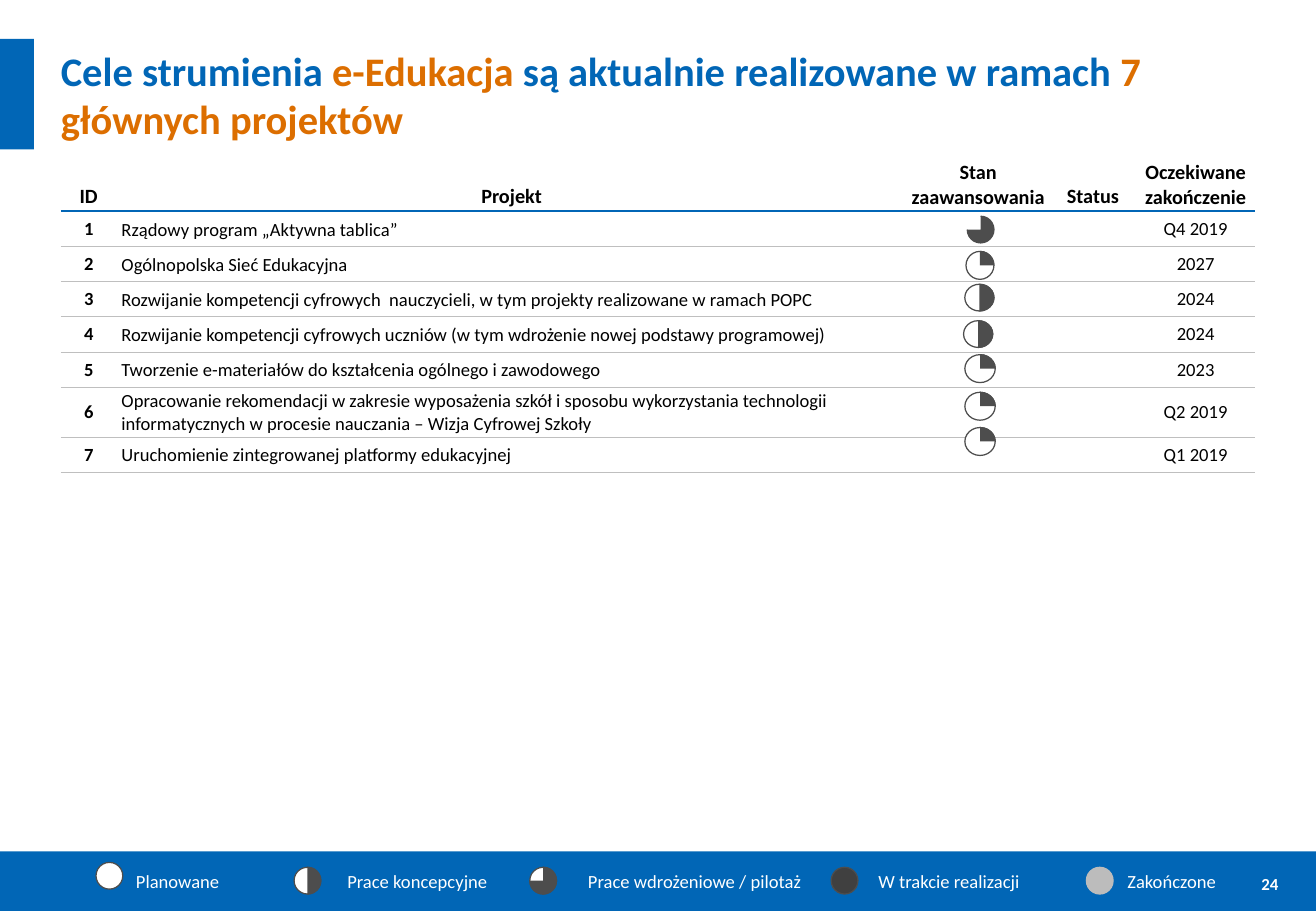
from dataclasses import dataclass
from lxml import etree
from pptx import Presentation
from pptx.dml.color import RGBColor
from pptx.enum.shapes import MSO_SHAPE
from pptx.enum.text import MSO_ANCHOR, PP_ALIGN
from pptx.oxml.ns import qn
from pptx.util import Inches, Pt

RECT, OVAL, ARC = MSO_SHAPE.RECTANGLE, MSO_SHAPE.OVAL, MSO_SHAPE.ARC
TOP, MID, LOW = MSO_ANCHOR.TOP, MSO_ANCHOR.MIDDLE, MSO_ANCHOR.BOTTOM
LEFT, MIDDLE = PP_ALIGN.LEFT, PP_ALIGN.CENTER


@dataclass(frozen=True)
class Theme:
    font: str = "Calibri"
    blue: str = "0166B6"
    orange: str = "DC6E00"
    white: str = "FFFFFF"
    black: str = "000000"
    dark: str = "4D4D4D"
    full: str = "404040"
    done: str = "BCBCBC"
    rule: str = "BFBFBF"
    title: int = 24
    head: int = 12
    body: int = 11
    page: int = 10


theme = Theme()


def write(host, text, size=theme.body, color=theme.black, accent=theme.orange,
          bold=False, align=LEFT, anchor=MID, pad=(0, 0), space=None, wrap=True):
    frame = getattr(host, "text_frame", host)
    frame.word_wrap = wrap
    host.vertical_anchor = anchor
    host.margin_left = host.margin_right = Inches(pad[0])
    host.margin_top = host.margin_bottom = Inches(pad[1])
    for n, line in enumerate(text.split("\n")):
        para = frame.add_paragraph() if n else frame.paragraphs[0]
        para.alignment = align
        if space:
            para.line_spacing = space
        for k, part in enumerate(line.split("*")):
            if part:
                run = para.add_run()
                run.text = part
                run.font.name = theme.font
                run.font.size = Pt(size)
                run.font.bold = bold
                run.font.color.rgb = RGBColor.from_string(accent if k % 2 else color)
        etree.SubElement(para._p, qn("a:endParaRPr"), sz=str(size * 100))


def draw(kind, x, y, w, h, fill, line=None, end=None):
    shape = slide.shapes.add_shape(kind, Inches(x), Inches(y), Inches(w), Inches(h))
    shape.shadow.inherit = False
    shape.fill.solid()
    shape.fill.fore_color.rgb = RGBColor.from_string(fill)
    if line:
        shape.line.color.rgb = RGBColor.from_string(line)
        shape.line.width = Pt(0.75)
    else:
        shape.line.fill.background()
    if end is not None:
        shape.adjustments[0] = 162
        shape.adjustments[1] = end


deck = Presentation()
deck.slide_width, deck.slide_height = Inches(10.83), Inches(7.5)
slide = deck.slides.add_slide(deck.slide_layouts[6])

draw(RECT, 0, 7.01, 10.83, 0.49, theme.blue)
draw(RECT, 0, 0.32, 0.28, 0.91, theme.blue)

page = slide.shapes.add_textbox(Inches(10.38), Inches(7.19), Inches(0.3), Inches(0.19))
write(page.text_frame, "24", size=theme.page, color=theme.white, bold=True,
      anchor=TOP, wrap=False)

title = slide.shapes.add_textbox(Inches(0.5), Inches(0.32), Inches(9.49), Inches(0.91))
write(title.text_frame,
      "Cele strumienia *e-Edukacja *są aktualnie realizowane w ramach *7 głównych projektów",
      size=theme.title, color=theme.blue, bold=True, pad=(0, 0.05))

heads = ["ID", "Projekt", "Stan\nzaawansowania", "Status", "Oczekiwane zakończenie"]
tasks = [
    ("Rządowy program „Aktywna tablica”", "Q4 2019"),
    ("Ogólnopolska Sieć Edukacyjna", "2027"),
    ("Rozwijanie kompetencji cyfrowych  nauczycieli, w tym projekty realizowane w ramach POPC", "2024"),
    ("Rozwijanie kompetencji cyfrowych uczniów (w tym wdrożenie nowej podstawy programowej)", "2024"),
    ("Tworzenie e-materiałów do kształcenia ogólnego i zawodowego", "2023"),
    ("Opracowanie rekomendacji w zakresie wyposażenia szkół i sposobu wykorzystania technologii "
     "informatycznych w procesie nauczania – Wizja Cyfrowej Szkoły", "Q2 2019"),
    ("Uruchomienie zintegrowanej platformy edukacyjnej", "Q1 2019"),
]
rows = [heads] + [[str(n), name, "", "", date] for n, (name, date) in enumerate(tasks, 1)]
widths = [0.46, 6.5, 1.18, 0.71, 0.98]
heights = [0.43] + [0.29] * 5 + [0.41, 0.29]
pads = [(0.02, 0.02), (0.04, 0.02), (0.02, 0.02), (0.02, 0.02), (0.01, 0)]

table = slide.shapes.add_table(len(rows), len(widths), Inches(0.5), Inches(1.3),
                               Inches(sum(widths)), Inches(sum(heights))).table
table.horz_banding = False
table._tbl.tblPr.find(qn("a:tableStyleId")).text = "{2D5ABB26-0587-4C30-8999-92F81FD0307C}"
for col, width in zip(table.columns, widths):
    col.width = Inches(width)
for r, row in enumerate(rows):
    table.rows[r].height = Inches(heights[r])
    for c, text in enumerate(row):
        cell = table.cell(r, c)
        if r == 0:
            write(cell, text, size=theme.head, bold=True, align=MIDDLE, anchor=LOW,
                  pad=(0.03, 0.02))
        else:
            write(cell, text, bold=c == 0, align=LEFT if c == 1 else MIDDLE,
                  pad=pads[c], space=1.07 if c == 1 and r < 6 else None)
        cell.fill.background()
        props = cell._tc.get_or_add_tcPr()
        sides = [("a:lnT", r - 1), ("a:lnB", r)] if r else [("a:lnB", r)]
        for n, (side, above) in enumerate(sides):
            edge = etree.Element(qn(side), w=str(Pt(0.75 if above else 1.5)))
            paint = etree.SubElement(edge, qn("a:solidFill"))
            etree.SubElement(paint, qn("a:srgbClr"), val=theme.rule if above else theme.blue)
            props.insert(n, edge)

legend = [
    ("Planowane", 0.79, 7.1, 1.02, 0.89, theme.white, theme.dark, None),
    ("Prace koncepcyjne", 2.42, 7.14, 2.76, 1.37, theme.white, theme.dark, 54),
    ("Prace wdrożeniowe / pilotaż", 4.36, 7.14, 4.74, 1.98, theme.white, theme.dark, 108),
    ("W trakcie realizacji", 6.84, 7.14, 7.13, 1.38, theme.full, theme.dark, None),
    ("Zakończone", 8.94, 7.14, 9.18, 0.94, theme.done, theme.done, None),
]
for text, x, y, left, width, fill, line, end in legend:
    draw(OVAL, x, y, 0.22, 0.22, fill, line)
    if end is not None:
        draw(ARC, x, y, 0.22, 0.22, theme.dark, theme.dark, end)
    label = slide.shapes.add_textbox(Inches(left), Inches(7.11), Inches(width), Inches(0.29))
    write(label.text_frame, text, color=theme.white, pad=(0.1, 0.05), wrap=False)

marks = [
    (7.96, 1.78, 0.22, 0.22, 108),
    (7.95, 2.07, 0.23, 0.23, 0),
    (7.94, 2.34, 0.24, 0.22, 54),
    (7.93, 2.64, 0.24, 0.22, 54),
    (7.94, 2.92, 0.25, 0.23, 0),
    (7.94, 3.23, 0.25, 0.23, 0),
    (7.94, 3.52, 0.25, 0.23, 0),
]
for *area, end in marks:
    if end != 108:
        draw(OVAL, *area, theme.white, theme.dark)
    draw(ARC, *area, theme.dark, theme.dark, end)

deck.save("out.pptx")
